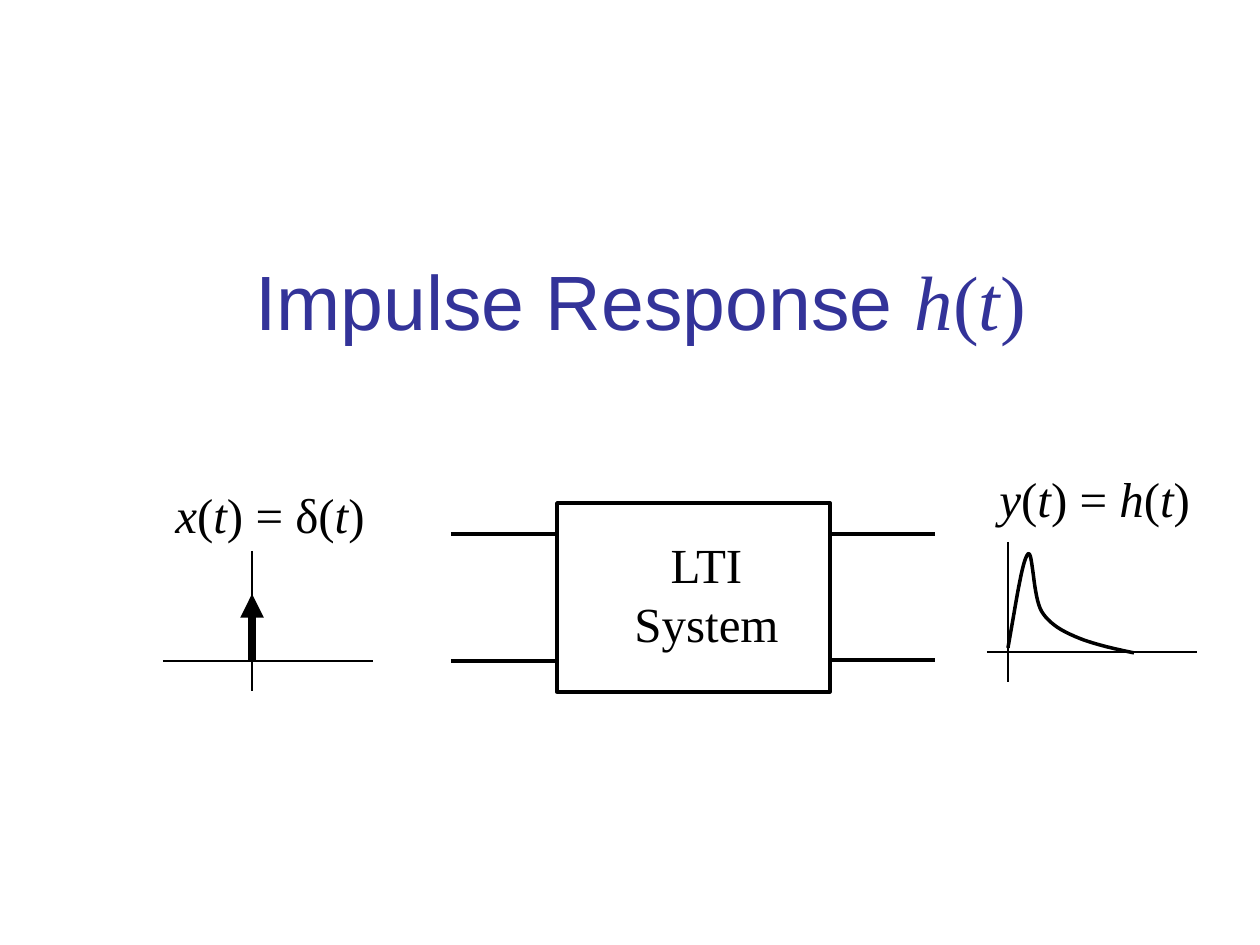
from dataclasses import dataclass

from lxml.etree import SubElement as Sub
from pptx import Presentation
from pptx.dml.color import RGBColor as Rgb
from pptx.enum.shapes import MSO_CONNECTOR as Conn, MSO_SHAPE as Kind
from pptx.enum.text import MSO_ANCHOR as Anchor, MSO_AUTO_SIZE as Fit, PP_ALIGN as Align
from pptx.oxml.ns import qn
from pptx.util import Emu, Inches, Pt

INK = {"title": "333399", "text": "000000", "line": "000000"}
SANS, SERIF = "Arial", "Times New Roman"


def px(n: float) -> Emu:
    return Emu(round(n * 914400 / 126))


@dataclass
class Line:
    start: tuple[int, int]
    end: tuple[int, int]
    width: float
    arrow: bool = False


@dataclass
class Label:
    box: tuple[int, int, int, int]
    rows: list[str]
    align: Align = Align.LEFT


LINES = [
    Line((451, 534), (557, 534), 2.25),
    Line((829, 534), (935, 534), 2.25),
    Line((829, 660), (935, 660), 2.25),
    Line((451, 661), (557, 661), 2.25),
    Line((163, 661), (373, 661), 1.5),
    Line((252, 551), (252, 691), 1.5),
    Line((252, 661), (252, 594), 4.5, True),
    Line((987, 652), (1197, 652), 1.5),
    Line((1008, 542), (1008, 682), 1.5),
]
LABELS = [
    Label((163, 478, 218, 72), ["|x|(|t|) = δ(|t|)"]),
    Label((987, 462, 218, 72), ["|y|(|t|) = |h|(|t|)"]),
    Label((621, 528, 171, 131), ["LTI", "System"], Align.CENTER),
]
CURVE = [
    (1008, 648),
    (1016, 604), (1022, 561), (1028, 554),
    (1033, 549), (1033, 598), (1042, 612),
    (1051, 626), (1066, 633), (1081, 639),
    (1097, 645), (1115, 649), (1134, 653),
]


def style(run, size: int, font: str, ink: str, slant: bool) -> None:
    run.font.size = Pt(size)
    run.font.name = font
    run.font.italic = slant
    run.font.color.rgb = Rgb.from_string(INK[ink])


def write(para, text: str, size: int, ink: str) -> None:
    for i, part in enumerate(text.split("|")):
        if part:
            run = para.add_run()
            run.text = part
            style(run, size, SERIF, ink, i % 2 == 1)


def stroke(line, width: float) -> None:
    line.color.rgb = Rgb.from_string(INK["line"])
    line.width = Pt(width)


def draw_line(slide, item: Line) -> None:
    ends = map(px, item.start + item.end)
    wire = slide.shapes.add_connector(Conn.STRAIGHT, *ends)
    stroke(wire.line, item.width)
    props = wire._element.spPr
    if item.arrow:
        Sub(props.find(qn("a:ln")), qn("a:tailEnd"), type="triangle")
    Sub(props, qn("a:effectLst"))


def draw_label(slide, item: Label) -> None:
    frame = slide.shapes.add_textbox(*map(px, item.box)).text_frame
    frame.word_wrap = False
    frame.auto_size = Fit.SHAPE_TO_FIT_TEXT
    for i, row in enumerate(item.rows):
        para = frame.add_paragraph() if i else frame.paragraphs[0]
        para.alignment = item.align
        write(para, row, 28, "text")


def draw_box(slide) -> None:
    box = slide.shapes.add_shape(Kind.RECTANGLE, *map(px, (557, 503, 273, 189)))
    box.shadow.inherit = False
    box.fill.background()
    stroke(box.line, 2)


def trace(knots: list[tuple[int, int]], steps: int = 16) -> list[tuple[Emu, Emu]]:
    dots = []
    for i in range(0, len(knots) - 1, 3):
        a, b, c, d = knots[i:i + 4]
        for n in range(1, steps + 1):
            t = n / steps
            s = 1 - t
            mix = (s**3, 3 * s * s * t, 3 * s * t * t, t**3)
            x, y = (sum(m * k for m, k in zip(mix, axis)) for axis in zip(a, b, c, d))
            dots.append((px(x), px(y)))
    return dots


def draw_curve(slide) -> None:
    pen = slide.shapes.build_freeform(*map(px, CURVE[0]))
    pen.add_line_segments(trace(CURVE), close=False)
    curve = pen.convert_to_shape()
    curve.shadow.inherit = False
    curve.fill.background()
    stroke(curve.line, 2)


def draw_title(slide) -> None:
    title = slide.shapes.title
    title.left, title.top, title.width, title.height = map(px, (105, 221, 1071, 157))
    frame = title.text_frame
    frame.text = "Impulse Response "
    frame.vertical_anchor = Anchor.MIDDLE
    para = frame.paragraphs[0]
    para.alignment = Align.CENTER
    style(para.runs[0], 44, SANS, "title", False)
    write(para, "|h|(|t|)", 44, "title")


def main() -> None:
    deck = Presentation()
    deck.slide_width, deck.slide_height = Inches(10), Inches(7.5)
    slide = deck.slides.add_slide(deck.slide_layouts[0])
    sub = slide.placeholders[1]._element
    sub.getparent().remove(sub)
    draw_title(slide)
    draw_box(slide)
    for item in LINES:
        draw_line(slide, item)
    for item in LABELS:
        draw_label(slide, item)
    draw_curve(slide)
    deck.save("out.pptx")


if __name__ == "__main__":
    main()
